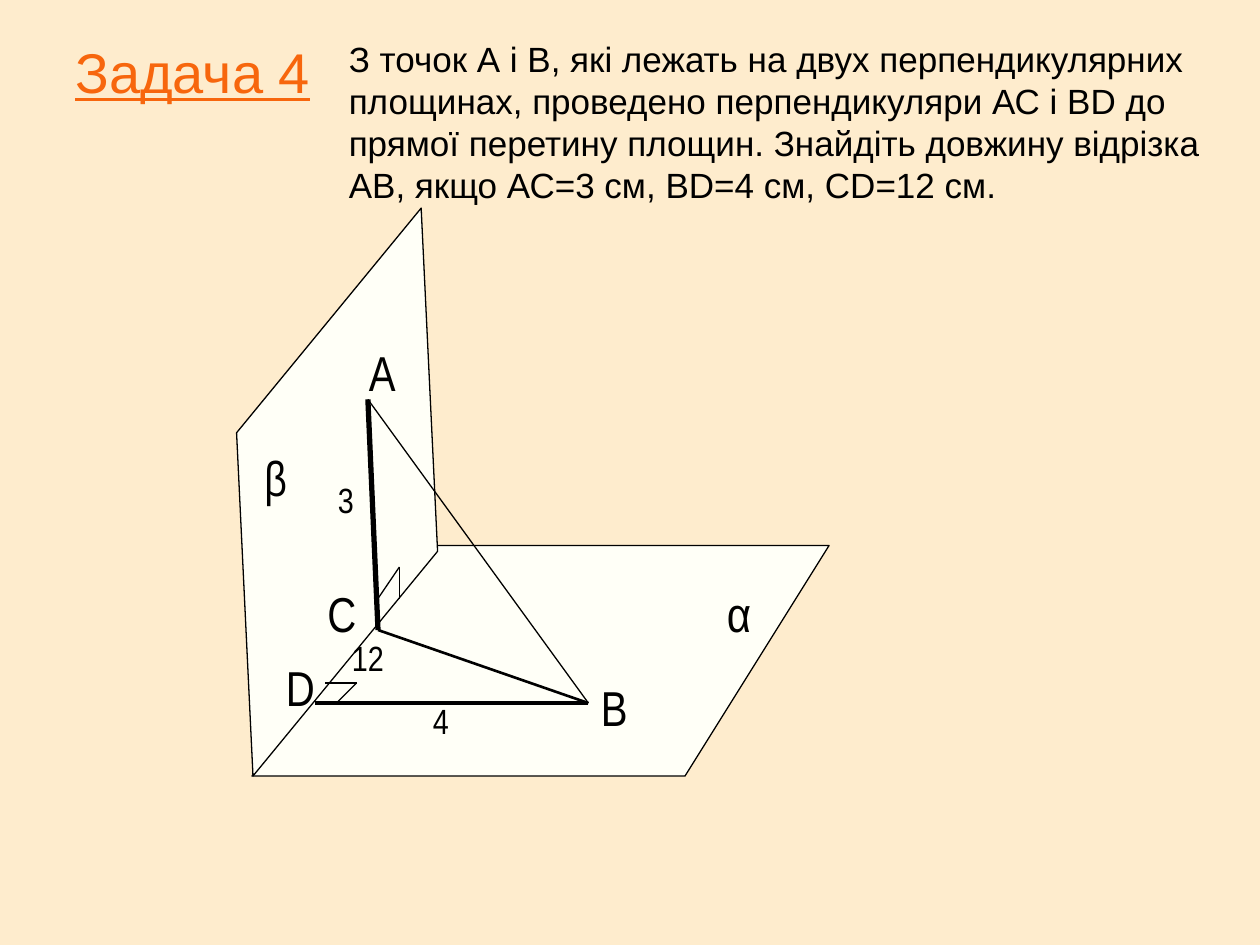
from pptx import Presentation
from pptx.dml.color import RGBColor
from pptx.enum.shapes import MSO_CONNECTOR, MSO_SHAPE
from pptx.enum.text import MSO_ANCHOR, MSO_AUTO_SIZE, PP_ALIGN
from pptx.oxml.ns import qn
from pptx.util import Inches, Pt
from lxml.etree import SubElement


def color(value):
    return RGBColor.from_string(value)


class GeometrySlide:
    ink = "000000"
    paper = "FEECCD"
    plane_fill = "FFFFF7"
    accent = "F7660D"
    body_font = "Arial"
    label_font = "Arial Narrow"

    def __init__(self, slide):
        self.slide = slide
        background = slide.background.fill
        background.solid()
        background.fore_color.rgb = color(self.paper)

    def plane(self, left, top, width, height, slant, rotation=0):
        plane = self.slide.shapes.add_shape(
            MSO_SHAPE.PARALLELOGRAM,
            Inches(left), Inches(top), Inches(width), Inches(height))
        plane.adjustments[0] = slant
        plane.rotation = rotation
        plane.shadow.inherit = False
        plane.fill.solid()
        plane.fill.fore_color.rgb = color(self.plane_fill)
        plane.line.color.rgb = color(self.ink)
        plane.line.width = Pt(0.75)

    def segment(self, start, end, weight=0.75):
        segment = self.slide.shapes.add_connector(
            MSO_CONNECTOR.STRAIGHT, *map(Inches, start + end))
        segment.line.color.rgb = color(self.ink)
        segment.line.width = Pt(weight)
        SubElement(segment._element.spPr, qn("a:effectLst"))

    def text(self, words, left, top, width, height, size, font,
             ink=None, align=PP_ALIGN.LEFT, underline=False):
        box = self.slide.shapes.add_textbox(
            Inches(left), Inches(top), Inches(width), Inches(height))
        frame = box.text_frame
        frame.word_wrap = True
        frame.auto_size = MSO_AUTO_SIZE.SHAPE_TO_FIT_TEXT
        paragraph = frame.paragraphs[0]
        paragraph.alignment = align
        run = paragraph.add_run()
        run.text = words
        run.font.name = font
        run.font.size = Pt(size)
        run.font.underline = underline
        run.font.color.rgb = color(ink or self.ink)
        return box

    def title(self, words, left, top, width, height):
        heading = self.text(words, left, top, width, height, 32,
                            self.body_font, self.accent, underline=True)
        heading.text_frame.auto_size = MSO_AUTO_SIZE.NONE
        heading.text_frame.vertical_anchor = MSO_ANCHOR.MIDDLE

    def point_label(self, words, left, top, width):
        self.text(words, left, top, width, 0.57, 28, self.label_font)

    def length_label(self, words, left, top, width):
        self.text(words, left, top, width, 0.43, 20, self.label_font,
                  align=PP_ALIGN.CENTER)


def main():
    presentation = Presentation()
    presentation.slide_width = Inches(10)
    presentation.slide_height = Inches(7.5)
    problem = GeometrySlide(
        presentation.slides.add_slide(presentation.slide_layouts[6]))

    a, b, c, d = (2.92, 3.17), (4.67, 5.58), (3, 5), (2.5, 5.58)

    problem.plane(2, 4.33, 4.58, 1.83, 0.625)
    problem.title("Задача 4", 0.5, 0.3, 9, 0.53)
    problem.plane(0.51, 2.99, 4.33, 1.83, 1.105, rotation=129.4)

    for start, end, weight in ((a, c, 3), (d, b, 2.25)):
        problem.segment(start, end, weight)

    for name, left, top, width in (("β", 2, 3.5, 0.5), ("α", 5.67, 4.58, 0.42)):
        problem.point_label(name, left, top, width)

    right_angles = (
        ((3, 4.75), (3.17, 4.5), (3.17, 4.75)),
        ((2.58, 5.42), (2.83, 5.42), (2.67, 5.58)),
    )
    for first, corner, last in right_angles:
        problem.segment(first, corner)
        problem.segment(corner, last)

    for name, left, top, width in (
            ("А", 2.83, 2.67, 0.42), ("С", 2.5, 4.58, 0.33),
            ("В", 4.67, 5.33, 0.5), ("D", 2.17, 5.17, 0.42)):
        problem.point_label(name, left, top, width)

    problem.text(
        "З точок А і В, які лежать на двух перпендикулярних площинах, "
        "проведено перпендикуляри АС і ВD до прямої перетину площин. "
        "Знайдіть довжину відрізка АВ, якщо АС=3 см, ВD=4 см, СD=12 см.",
        2.67, 0.25, 7.17, 1.43, 20, problem.body_font)

    problem.segment(a, b)
    problem.segment(c, b, 1.5)

    for length, left, top, width in (
            ("3", 2.58, 3.75, 0.33), ("4", 3.25, 5.5, 0.5),
            ("12", 2.58, 5, 0.68)):
        problem.length_label(length, left, top, width)

    presentation.save("out.pptx")


if __name__ == "__main__":
    main()
